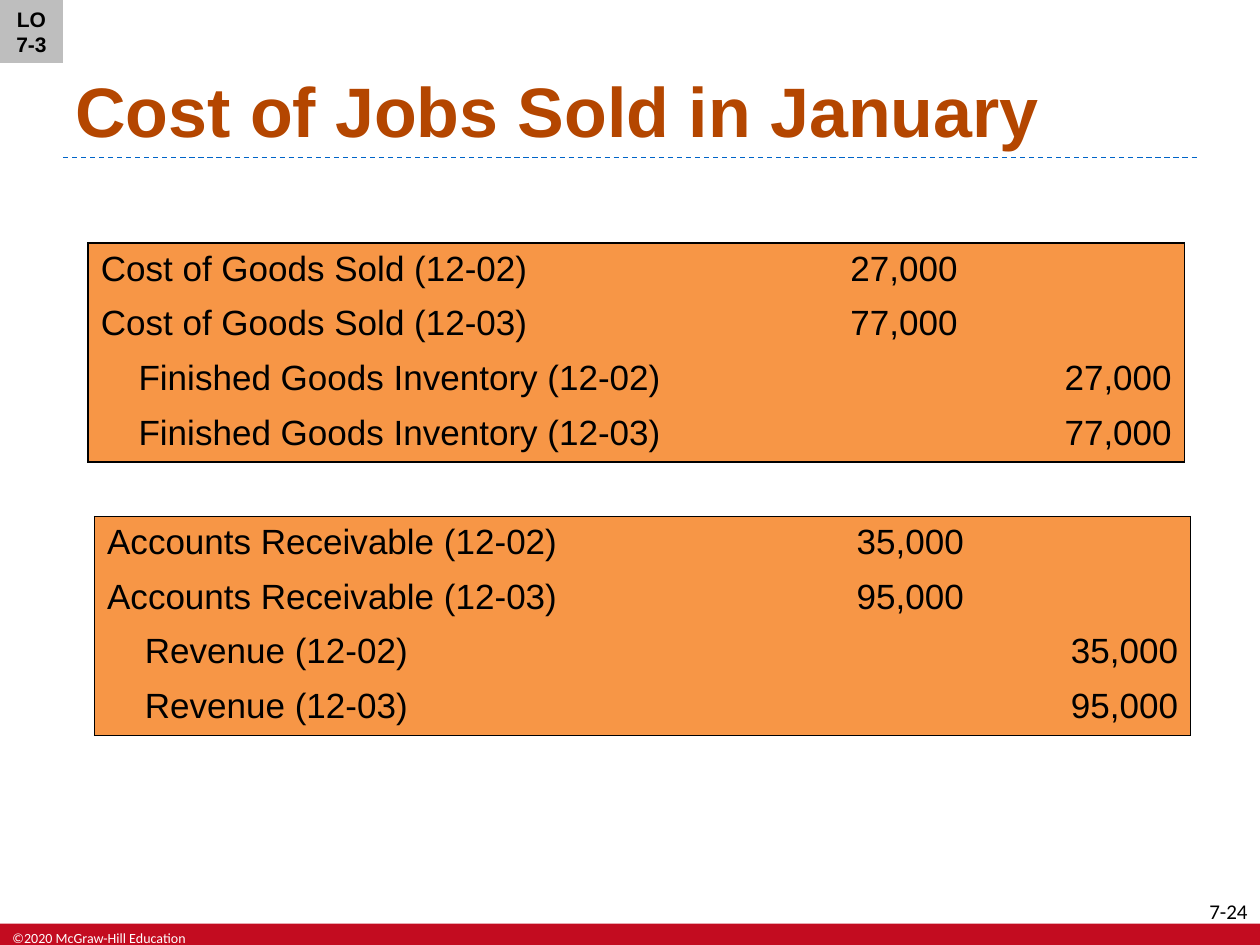
import lxml.etree
import pptx
import pptx.dml.color
import pptx.enum.dml
import pptx.enum.shapes
import pptx.enum.text
import pptx.oxml.ns
import pptx.util

Inches = pptx.util.Inches
Pt = pptx.util.Pt
RGBColor = pptx.dml.color.RGBColor
ALIGN = pptx.enum.text.PP_ALIGN
ANCHOR = pptx.enum.text.MSO_ANCHOR
qn = pptx.oxml.ns.qn

BLACK = RGBColor(0x00, 0x00, 0x00)
WHITE = RGBColor(0xFF, 0xFF, 0xFF)
RED = RGBColor(0xC3, 0x0C, 0x20)
BLUE = RGBColor(0x00, 0x64, 0xC8)
RUST = RGBColor(0xB4, 0x46, 0x00)
ORANGE = RGBColor(0xF7, 0x96, 0x46)
GREY = RGBColor(0xBE, 0xBE, 0xBE)


class JournalSlide:
    """Hold the slide and the style of its journal entries."""

    columns = (5.3, 1.7, 1.7)
    rows = (0.41, 0.41, 0.41, 0.43)
    indent = 0.3

    def __init__(self, slide):
        self.slide = slide

    def set_text(self, frame, text, size, color=BLACK, font="Arial", bold=False,
                 align=ALIGN.LEFT, indent=0):
        paragraph = frame.paragraphs[0]
        paragraph.text = text
        paragraph.alignment = align
        if indent:
            paragraph._p.get_or_add_pPr().set("marL", str(Inches(indent)))
        paragraph.font.size = Pt(size)
        paragraph.font.name = font
        paragraph.font.bold = bold
        paragraph.font.color.rgb = color

    def text(self, box, text, size, anchor=ANCHOR.TOP, **style):
        frame = self.slide.shapes.add_textbox(*map(Inches, box)).text_frame
        frame.word_wrap = True
        frame.vertical_anchor = anchor
        self.set_text(frame, text, size, **style)

    def block(self, box, fill):
        block = self.slide.shapes.add_shape(
            pptx.enum.shapes.MSO_SHAPE.RECTANGLE, *map(Inches, box))
        block.shadow.inherit = False
        block.fill.solid()
        block.fill.fore_color.rgb = fill
        block.line.fill.background()
        return block

    def dashed_rule(self, left, right, y):
        rule = self.slide.shapes.add_connector(
            pptx.enum.shapes.MSO_CONNECTOR.STRAIGHT,
            Inches(left), Inches(y), Inches(right), Inches(y))
        rule.line.color.rgb = BLUE
        rule.line.width = Pt(0.75)
        rule.line.dash_style = pptx.enum.dml.MSO_LINE.DASH
        lxml.etree.SubElement(rule._element.spPr, qn("a:effectLst"))

    def border(self, cell, side, visible):
        properties = cell._tc.get_or_add_tcPr()
        edge = lxml.etree.SubElement(properties, qn(f"a:ln{side}"), w=str(Pt(1)))
        if visible:
            fill = lxml.etree.SubElement(edge, qn("a:solidFill"))
            lxml.etree.SubElement(fill, qn("a:srgbClr"), val=str(BLACK))
        else:
            lxml.etree.SubElement(edge, qn("a:noFill"))

    def journal_entry(self, left, top, entries):
        table = self.slide.shapes.add_table(
            len(self.rows), len(self.columns), Inches(left), Inches(top),
            Inches(sum(self.columns)), Inches(sum(self.rows))).table
        table.first_row = table.horz_banding = False
        for column, width in zip(table.columns, self.columns):
            column.width = Inches(width)
        for row, height in zip(table.rows, self.rows):
            row.height = Inches(height)
        last_row, last_column = len(self.rows) - 1, len(self.columns) - 1
        for r, (account, debit, credit) in enumerate(entries):
            for c, value in enumerate((account, debit, credit)):
                cell = table.cell(r, c)
                outer = {"L": c == 0, "R": c == last_column,
                         "T": r == 0, "B": r == last_row}
                for side, visible in outer.items():
                    self.border(cell, side, visible)
                cell.fill.solid()
                cell.fill.fore_color.rgb = ORANGE
                self.set_text(cell.text_frame, value, 20,
                              align=ALIGN.RIGHT if c else ALIGN.LEFT,
                              indent=self.indent if credit and c == 0 else 0)


def main():
    deck = pptx.Presentation()
    deck.slide_width, deck.slide_height = Inches(10), Inches(7.5)
    page = JournalSlide(deck.slides.add_slide(deck.slide_layouts[6]))

    page.block((0, 7.33, 10, 0.17), RED)
    page.text((0, 7.33, 1.6, 0.17), "©2020 McGraw-Hill Education", 8,
              color=WHITE, font="Calibri")
    page.text((9.46, 7.08, 0.54, 0.2), "7-24", 12, font="Calibri",
              align=ALIGN.RIGHT)
    page.dashed_rule(0.5, 9.5, 1.25)
    page.text((0.5, 0.05, 9, 1.2), "Cost of Jobs Sold in January", 40,
              anchor=ANCHOR.BOTTOM, color=RUST, bold=True)

    page.journal_entry(0.7, 1.93, (
        ("Cost of Goods Sold (12-02)", "27,000", ""),
        ("Cost of Goods Sold (12-03)", "77,000", ""),
        ("Finished Goods Inventory (12-02)", "", "27,000"),
        ("Finished Goods Inventory (12-03)", "", "77,000"),
    ))
    page.journal_entry(0.75, 4.1, (
        ("Accounts Receivable (12-02)", "35,000", ""),
        ("Accounts Receivable (12-03)", "95,000", ""),
        ("Revenue (12-02)", "", "35,000"),
        ("Revenue (12-03)", "", "95,000"),
    ))

    objective = page.block((0, 0, 0.5, 0.5), GREY).text_frame
    objective.word_wrap = True
    objective.vertical_anchor = ANCHOR.MIDDLE
    page.set_text(objective, "LO 7-3", 12, bold=True, align=ALIGN.CENTER)

    deck.save("out.pptx")


if __name__ == "__main__":
    main()
